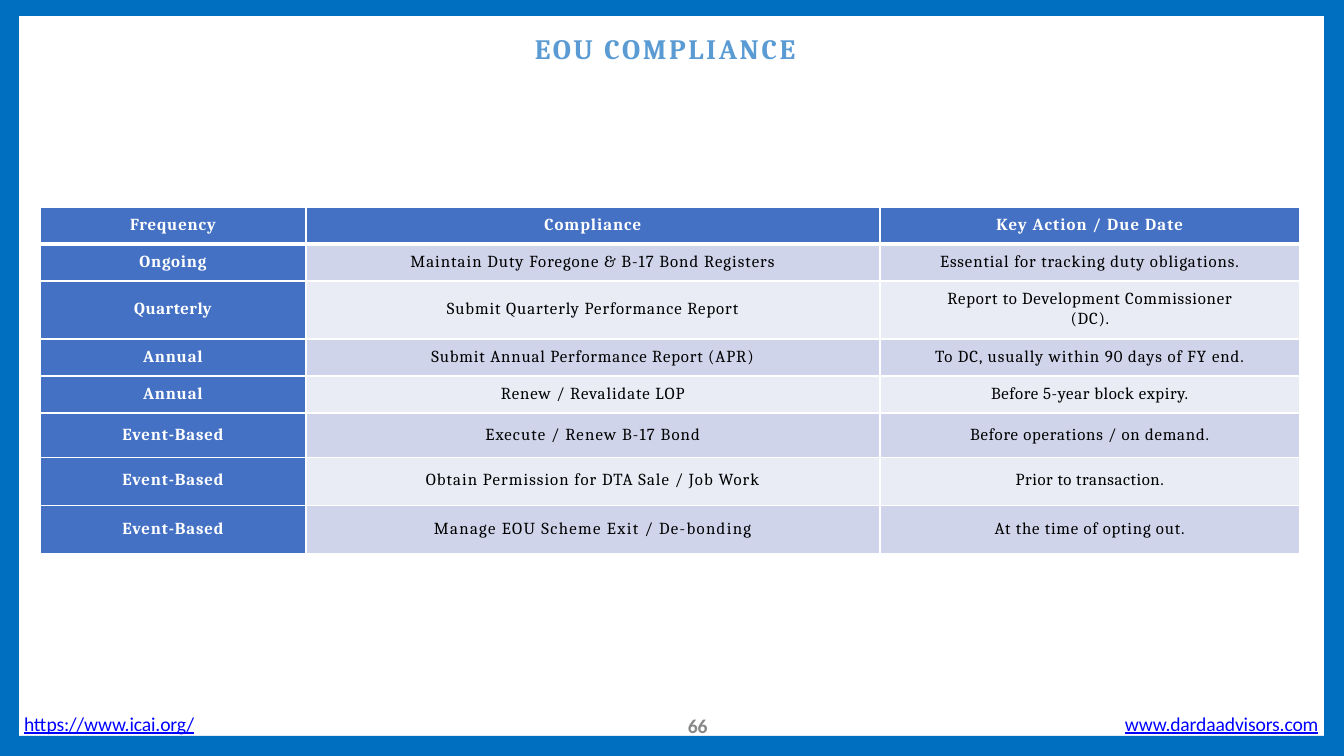
from lxml.etree import SubElement
from pptx import Presentation
from pptx.dml.color import RGBColor
from pptx.enum.text import MSO_ANCHOR, PP_ALIGN
from pptx.oxml.ns import qn
from pptx.util import Pt

EMU_PER_PX = 12192000 / 1344
FRAME_BLUE = "006FC0"
HEADER_BLUE = "4471C4"
BAND_FILLS = ("E9EBF5", "CFD4EA")
WHITE = "FFFFFF"

RIGHT_BAR = [(1324, 0), (1344, 0), (1344, 756), (1324, 756)]
FRAME = [(0, 0), (1342, 0), (1342, 16), (19, 16),
         (19, 736), (1335, 736), (1335, 756), (0, 756)]

COLUMN_WIDTHS = (266, 574, 420)
ROW_HEIGHTS = (37, 37, 58, 37, 37, 45, 48, 48)
ROW_INSETS = (8, 8, 18, 8, 8, 12, 13, 14)
TWO_LINE_INSET = 8
COMPLIANCE_ROWS = [
    [("Frequency", 0.6), ("Compliance", 0.7), ("Key Action / Due Date", 0.8)],
    [("Ongoing", 0.6), ("Maintain Duty Foregone & B-17 Bond Registers", 0.74),
     ("Essential for tracking duty obligations.", 0.64)],
    [("Quarterly", 0.4), ("Submit Quarterly Performance Report", 0.67),
     ("Report to Development Commissioner\n(DC).", 0.56)],
    [("Annual", 0.6), ("Submit Annual Performance Report (APR)", 0.62),
     ("To DC, usually within 90 days of FY end.", 0.7)],
    [("Annual", 0.6), ("Renew / Revalidate LOP", 0.67),
     ("Before 5-year block expiry.", 0.44)],
    [("Event-Based", 0.62), ("Execute / Renew B-17 Bond", 0.82),
     ("Before operations / on demand.", 0.56)],
    [("Event-Based", 0.62), ("Obtain Permission for DTA Sale / Job Work", 0.77),
     ("Prior to transaction.", 0.4)],
    [("Event-Based", 0.62), ("Manage EOU Scheme Exit / De-bonding", 0.96),
     ("At the time of opting out.", 0.58)],
]


def px(length):
    """Turn a length in px into EMU."""
    return round(length * EMU_PER_PX)


def color(value):
    """Turn a hex string into a colour."""
    return RGBColor.from_string(value)


def format_spans(para, font, size, ink, spacing, bold=False, underline=False):
    """Style every run of a paragraph."""
    for span in para.runs:
        span.font.name = font
        span.font.size = Pt(size)
        span.font.color.rgb = color(ink)
        span.font.bold = bold
        span.font.underline = underline
        span._r.get_or_add_rPr().set("spc", str(round(spacing * 100)))


def add_outline(page, points):
    """Draw a filled polygon of the page frame."""
    builder = page.shapes.build_freeform(*points[0], scale=EMU_PER_PX)
    builder.add_line_segments(points[1:], close=True)
    shape = builder.convert_to_shape()
    shape.shadow.inherit = False
    shape.fill.solid()
    shape.fill.fore_color.rgb = color(FRAME_BLUE)
    shape.line.fill.background()


def add_label(page, text, left, top, width, height, inset, font, size, ink,
              spacing, inset_top=0, line_height=None, **emphasis):
    """Add a one-line text box."""
    box = page.shapes.add_textbox(px(left), px(top), px(width), px(height))
    frame = box.text_frame
    frame.word_wrap = True
    frame.margin_left, frame.margin_top = px(inset), px(inset_top)
    frame.margin_right = frame.margin_bottom = 0
    frame.text = text
    para = frame.paragraphs[0]
    if line_height:
        para.line_spacing = Pt(line_height)
    format_spans(para, font, size, ink, spacing, **emphasis)


def set_borders(cell, top, bottom):
    """Give a cell white borders, with top and bottom widths in points."""
    properties = cell._tc.get_or_add_tcPr()
    for side, width in (("L", 1), ("R", 1), ("T", top), ("B", bottom)):
        line = SubElement(properties, qn(f"a:ln{side}"), w=str(Pt(width)))
        fill = SubElement(line, qn("a:solidFill"))
        SubElement(fill, qn("a:srgbClr"), val=WHITE)


def fill_cell(cell, text, spacing, inset, fill, ink, bold):
    """Write centred text into a coloured cell."""
    cell.fill.solid()
    cell.fill.fore_color.rgb = color(fill)
    cell.vertical_anchor = MSO_ANCHOR.TOP
    cell.margin_left = cell.margin_right = cell.margin_bottom = 0
    cell.margin_top = px(inset)
    cell.text_frame.text = text
    for index, para in enumerate(cell.text_frame.paragraphs):
        para.alignment = PP_ALIGN.CENTER
        if index:
            para.space_before = Pt(1.1)
        format_spans(para, "Cambria", 12, ink, spacing, bold=bold)


def add_compliance_table(page):
    """Add the table of compliance duties."""
    table = page.shapes.add_table(
        len(ROW_HEIGHTS), len(COLUMN_WIDTHS), px(40), px(207),
        px(sum(COLUMN_WIDTHS)), px(sum(ROW_HEIGHTS))).table
    table.horz_banding = False
    for column, width in zip(table.columns, COLUMN_WIDTHS):
        column.width = px(width)
    for r, entries in enumerate(COMPLIANCE_ROWS):
        table.rows[r].height = px(ROW_HEIGHTS[r])
        for c, (text, spacing) in enumerate(entries):
            heading = r == 0 or c == 0
            cell = table.cell(r, c)
            set_borders(cell, 3 if r == 1 else 1, 3 if r == 0 else 1)
            fill_cell(cell, text, spacing,
                      TWO_LINE_INSET if "\n" in text else ROW_INSETS[r],
                      HEADER_BLUE if heading else BAND_FILLS[r % 2],
                      WHITE if heading else "000000", heading)


def main():
    """Build the slide and save it."""
    deck = Presentation()
    deck.slide_width, deck.slide_height = px(1344), px(756)
    page = deck.slides.add_slide(deck.slide_layouts[6])
    add_outline(page, RIGHT_BAR)
    add_outline(page, FRAME)
    add_compliance_table(page)
    for text, left, width in (("https://www.icai.org/", 23, 176),
                              ("www.dardaadvisors.com", 1124, 200)):
        add_label(page, text, left, 715, width, 22, 1, "Calibri", 14, "0000FF",
                  -0.1, line_height=14.3, underline=True)
    add_label(page, "66", 667, 717, 47, 24, 21, "Calibri", 14, "888888",
              -0.2, line_height=14.3, bold=True)
    add_label(page, "EOU COMPLIANCE", 144, 25, 1006, 77, 391, "Cambria", 20,
              "5B9BD4", 1.86, inset_top=7, bold=True)
    deck.save("out.pptx")


if __name__ == "__main__":
    main()
